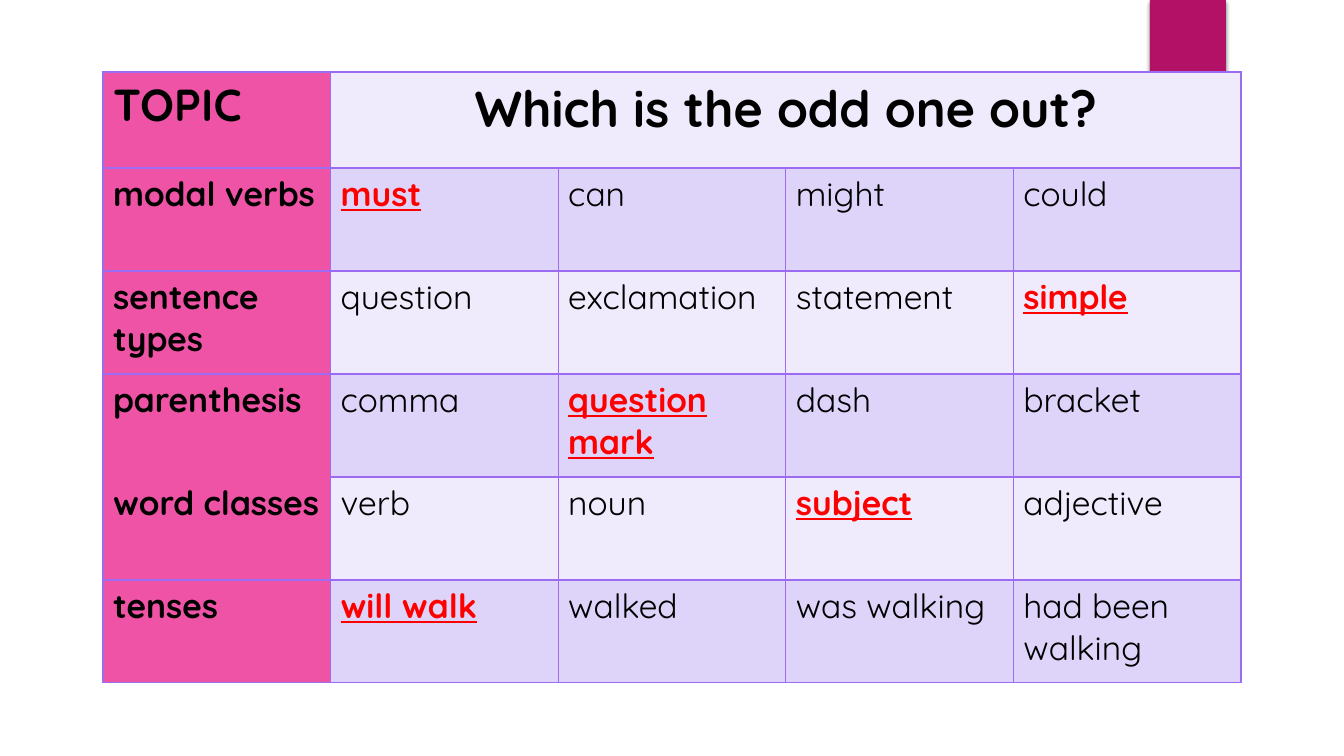
from lxml import etree
from pptx import Presentation
from pptx.dml.color import RGBColor
from pptx.enum.shapes import MSO_SHAPE
from pptx.enum.text import PP_ALIGN
from pptx.oxml.ns import qn
from pptx.util import Pt

RECTANGLE = MSO_SHAPE.RECTANGLE
CENTER = PP_ALIGN.CENTER

HEADER = ("TOPIC", "Which is the odd one out?")
# topic, four words, position of the odd one out
ROWS = [
    ("modal verbs", ["must", "can", "might", "could"], 1),
    ("sentence types", ["question", "exclamation", "statement", "simple"], 4),
    ("parenthesis", ["comma", "question mark", "dash", "bracket"], 2),
    ("word classes", ["verb", "noun", "subject", "adjective"], 3),
    ("tenses", ["will walk", "walked", "was walking", "had been walking"], 1),
]
OPEN_EDGES = {(3, 0): "lnB", (4, 0): "lnT"}

FONT = "Quicksand"
COLORS = {
    "tab": "B31166", "topic": "EF53A5", "light": "EFEBFC", "dark": "DED4FA",
    "border": "9B6BF2", "text": "000000", "answer": "FF0000",
}
SLIDE_W, SLIDE_H = 1344, 756
TAB = (1150, 0, 76, 126)
LEFT, TOP, WIDTH = 103, 72, 1138
HEADER_H, ROW_H = 96, 103
BORDER_PT = 1


def px(n):
    return round(n * 914400 / 100.8)


def rgb(name):
    return RGBColor.from_string(COLORS[name])


def add_tab(s):
    sp = s.shapes.add_shape(RECTANGLE, *map(px, TAB))
    sp.fill.solid()
    sp.fill.fore_color.rgb = rgb("tab")
    sp.line.fill.background()
    sp.shadow.inherit = False
    effects = sp._element.spPr.find(qn("a:effectLst"))
    shadow = etree.SubElement(effects, qn("a:outerShdw"), blurRad=str(Pt(3)),
                              dist=str(Pt(2)), dir="5400000", rotWithShape="0")
    color = etree.SubElement(shadow, qn("a:srgbClr"), val="000000")
    etree.SubElement(color, qn("a:alpha"), val="45000")


def set_borders(cell, open_edge):
    tcPr = cell._tc.get_or_add_tcPr()
    for i, edge in enumerate(("lnL", "lnR", "lnT", "lnB")):
        ln = etree.Element(qn("a:" + edge), w=str(Pt(BORDER_PT)))
        if edge == open_edge:
            etree.SubElement(ln, qn("a:noFill"))
        else:
            fill = etree.SubElement(ln, qn("a:solidFill"))
            etree.SubElement(fill, qn("a:srgbClr"), val=COLORS["border"])
        tcPr.insert(i, ln)


def write(cell, text, size, bold=False, answer=False):
    cell.text_frame.text = text
    font = cell.text_frame.paragraphs[0].runs[0].font
    font.name, font.size = FONT, Pt(size)
    font.bold = bold or answer
    font.underline = answer
    font.color.rgb = rgb("answer" if answer else "text")


def add_quiz(s):
    n_rows, n_cols = len(ROWS) + 1, len(ROWS[0][1]) + 1
    height = HEADER_H + ROW_H * len(ROWS)
    table = s.shapes.add_table(n_rows, n_cols, px(LEFT), px(TOP),
                               px(WIDTH), px(height)).table
    for column in table.columns:
        column.width = px(WIDTH / n_cols)
    for r, row in enumerate(table.rows):
        row.height = px(ROW_H if r else HEADER_H)
        for c, cell in enumerate(row.cells):
            band = "dark" if r % 2 else "light"
            cell.fill.solid()
            cell.fill.fore_color.rgb = rgb(band if c else "topic")
            set_borders(cell, OPEN_EDGES.get((r, c)))

    title = table.cell(0, 1)
    title.merge(table.cell(0, n_cols - 1))
    write(table.cell(0, 0), HEADER[0], 32, bold=True)
    write(title, HEADER[1], 36, bold=True)
    title.text_frame.paragraphs[0].alignment = CENTER

    for r, (topic, words, odd) in enumerate(ROWS, 1):
        write(table.cell(r, 0), topic, 24, bold=True)
        for c, word in enumerate(words, 1):
            write(table.cell(r, c), word, 24, answer=c == odd)


def main():
    prs = Presentation()
    prs.slide_width, prs.slide_height = px(SLIDE_W), px(SLIDE_H)
    s = prs.slides.add_slide(prs.slide_layouts[6])
    add_tab(s)
    add_quiz(s)
    prs.save("out.pptx")


if __name__ == "__main__":
    main()
